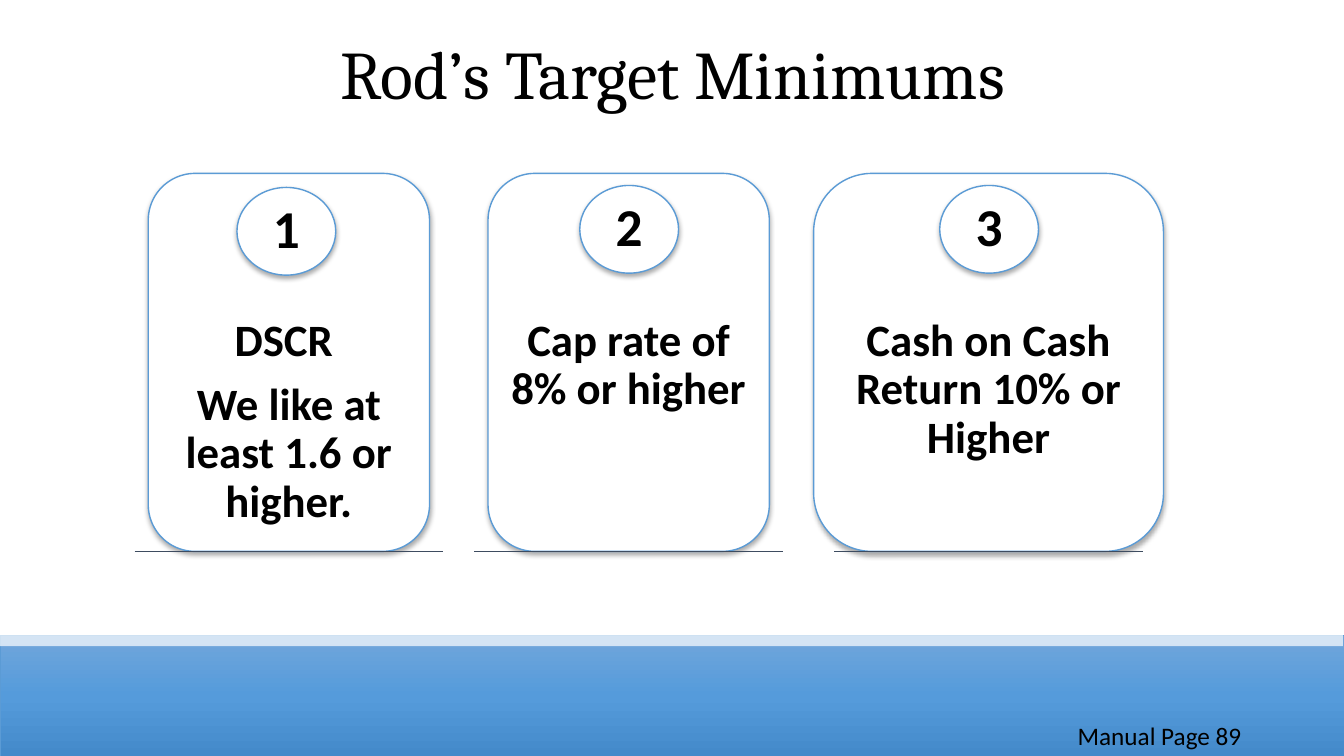
from dataclasses import dataclass

from lxml.etree import SubElement
from pptx import Presentation
from pptx.dml.color import RGBColor
from pptx.enum.shapes import MSO_CONNECTOR, MSO_SHAPE
from pptx.enum.text import MSO_ANCHOR, PP_ALIGN
from pptx.oxml.ns import qn
from pptx.util import Inches, Pt


@dataclass(frozen=True)
class Theme:
    # Colours
    ink: str = "000000"
    paper: str = "FFFFFF"
    edge: str = "5B9BD5"
    rule: str = "3E4C60"
    band: tuple = ((0, "71A6DB"), (50, "559BDB"), (100, "448ACA"))
    # Fonts and type sizes
    serif: str = "Cambria"
    sans: str = "Calibri"
    title: float = 48.6
    digit: float = 38
    body: float = 32
    foot: float = 18


def cell(num):
    """Turn grid columns or rows, ten to the inch, into a length."""
    return Inches(num / 10)


def tint(node, code, alpha=100):
    clr = SubElement(node, qn("a:srgbClr"), val=code)
    if alpha < 100:
        SubElement(clr, qn("a:alpha"), val=str(alpha * 1000))


class Deck:
    def __init__(self, theme):
        self.theme = theme
        self.show = Presentation()
        self.show.slide_width = Inches(13.33)
        self.show.slide_height = Inches(7.5)
        self.slide = self.show.slides.add_slide(self.show.slide_layouts[6])

    def shape(self, kind, box, fill=None, line=None, width=1, shade=False):
        item = self.slide.shapes.add_shape(kind, *map(cell, box))
        item.shadow.inherit = False
        item.fill.solid()
        item.fill.fore_color.rgb = RGBColor.from_string(fill or self.theme.paper)
        if line:
            item.line.color.rgb = RGBColor.from_string(line)
            item.line.width = Pt(width)
        else:
            item.line.fill.background()
        if shade:
            glow = SubElement(
                item.element.spPr.find(qn("a:effectLst")), qn("a:outerShdw"),
                blurRad=str(Pt(3.5)), dist=str(Pt(2.2)), dir="5400000", rotWithShape="0")
            tint(glow, self.theme.ink, 32)
        return item

    def blend(self, item, stops):
        item.fill.gradient()
        item.fill.gradient_angle = 270
        group = item.element.spPr.find(qn("a:gradFill")).find(qn("a:gsLst"))
        for old in list(group):
            group.remove(old)
        for pos, code in stops:
            tint(SubElement(group, qn("a:gs"), pos=str(pos * 1000)), code)

    def fade(self, item, alpha):
        clr = item.element.spPr.find(qn("a:solidFill"))[0]
        SubElement(clr, qn("a:alpha"), val=str(alpha * 1000))

    def rule(self, mid, top, width):
        ends = (mid - width / 2, top, mid + width / 2, top)
        item = self.slide.shapes.add_connector(MSO_CONNECTOR.STRAIGHT, *map(cell, ends))
        item.line.color.rgb = RGBColor.from_string(self.theme.rule)
        item.line.width = Pt(0.5)
        SubElement(item.element.spPr, qn("a:effectLst"))

    def label(self, item, lines, size, font=None, bold=False, align=PP_ALIGN.CENTER,
              space=0.9, after=0, inset=(1, 0), anchor=MSO_ANCHOR.TOP):
        frame = item.text_frame
        frame.word_wrap = True
        frame.vertical_anchor = anchor
        frame.margin_left = frame.margin_right = cell(inset[0])
        frame.margin_top = frame.margin_bottom = cell(inset[1])
        frame.text = "\n".join(lines)
        for para in frame.paragraphs:
            para.alignment = align
            para.line_spacing = space
            para.space_after = Pt(after)
            para.font.name = font or self.theme.sans
            para.font.size = Pt(size)
            para.font.bold = bold
            para.font.color.rgb = RGBColor.from_string(self.theme.ink)

    def text(self, box, lines, size, **style):
        item = self.slide.shapes.add_textbox(*map(cell, box))
        self.label(item, lines, size, **style)

    def card(self, digit, left, width, disc, lines):
        look = self.theme
        top, high = 17.2, 37.5
        self.shape(MSO_SHAPE.ROUNDED_RECTANGLE, (left, top, width, high),
                   line=look.edge, shade=True)
        self.text((left, 31.5, width, 22.5), lines, look.body, bold=True, after=11.2)
        # Numbered disc
        item = self.shape(MSO_SHAPE.OVAL, (*disc, 9.8, 8.7), line=look.edge, shade=True)
        self.label(item, [str(digit)], look.digit, bold=True,
                   inset=(0.9, 0.1), anchor=MSO_ANCHOR.MIDDLE)
        # Base line under the card
        self.rule(left + width / 2, top + high, 30.6)


def main():
    look = Theme()
    deck = Deck(look)

    # Blue band with a pale strip on top
    band = deck.shape(MSO_SHAPE.RECTANGLE, (0, 63, 133.3, 12), line=look.edge, width=0.5)
    deck.blend(band, look.band)
    strip = deck.shape(MSO_SHAPE.RECTANGLE, (0, 62.9, 133.2, 1.2))
    deck.fade(strip, 70)

    # Title
    deck.text((9.2, 4, 115, 14.5), ["Rod’s Target Minimums"], look.title, font=look.serif)

    # Cards: left, width, disc corner, wording
    cards = (
        (14.7, 27.9, (23.5, 18.6), ["DSCR ", "We like at least 1.6 or higher."]),
        (48.4, 27.9, (57.5, 18.4), ["Cap rate of 8% or higher"]),
        (80.7, 34.7, (93.2, 18.4), ["Cash on Cash Return 10% or Higher"]),
    )
    for digit, card in enumerate(cards, 1):
        deck.card(digit, *card)

    # Page note
    deck.text((105.9, 71, 27.4, 4), ["Manual Page 89"], look.foot,
              align=PP_ALIGN.LEFT, space=1, inset=(1, 0.5))

    deck.show.save("out.pptx")


if __name__ == "__main__":
    main()
